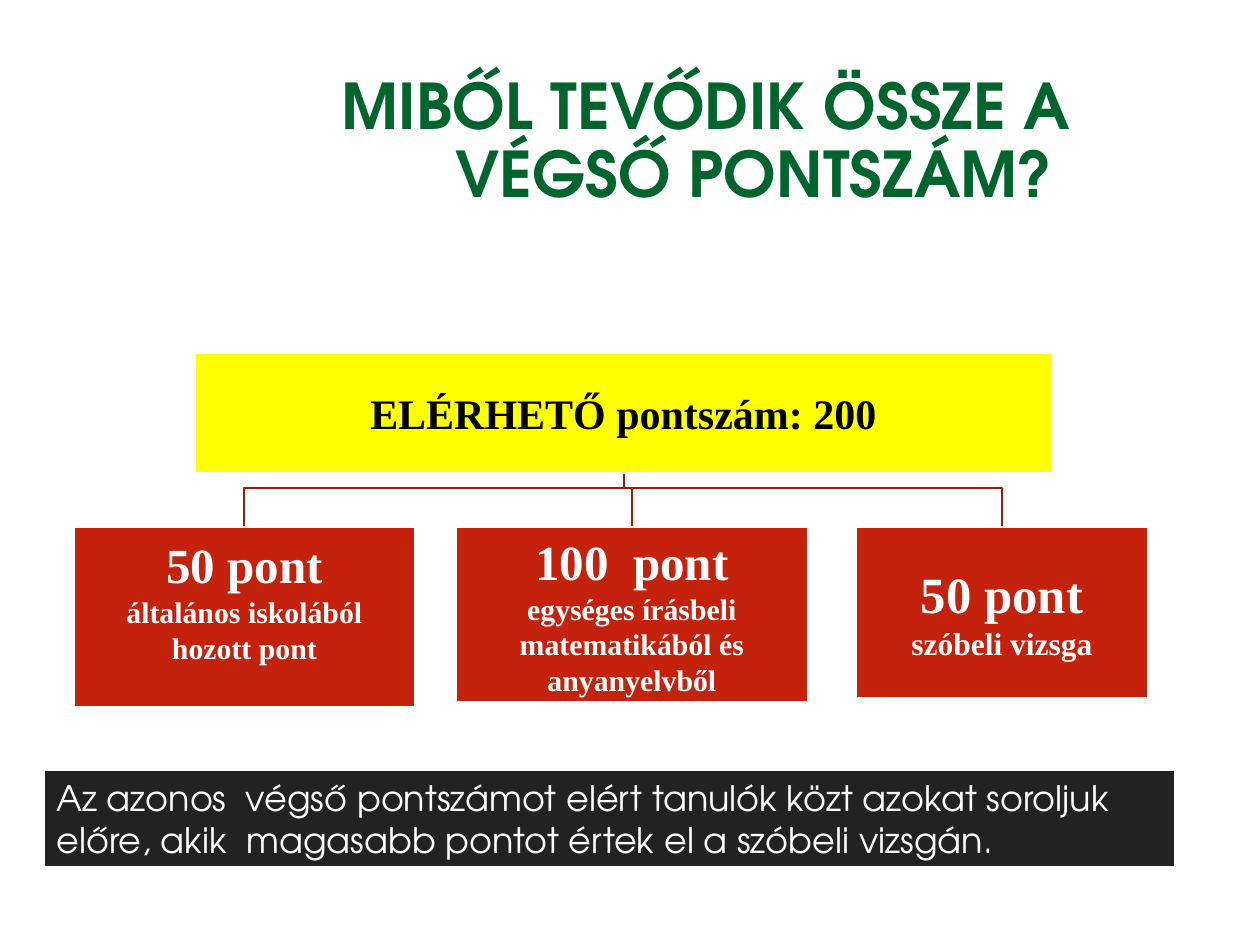
from pptx import Presentation, util as u
from pptx.dml.color import RGBColor
from pptx.enum import shapes, text

PX = 914400 / 126
SANS, SERIF = "TeX Gyre Adventor", "Times New Roman"
GREEN, RED, DARK_RED = "00642D", "C4220D", "9D1B0A"
YELLOW, CHARCOAL, BLACK, WHITE = "FFFF00", "222222", "000000", "FFFFFF"


def px(length):
    """Turn pixels into EMU."""
    return u.Emu(round(length * PX))


def color(hex_string):
    """Turn a hex string into a colour."""
    return RGBColor.from_string(hex_string)


def apply(target, values):
    """Set each attribute from a dict of format values."""
    for name, value in values.items():
        setattr(target, name, value)


def write(frame, lines, ink, font, align, **layout):
    """Write (wording, size) lines into a text frame, one paragraph each."""
    apply(frame, {"word_wrap": True, "vertical_anchor": text.MSO_ANCHOR.MIDDLE, **layout})
    for index, (wording, size) in enumerate(lines):
        paragraph = frame.add_paragraph() if index else frame.paragraphs[0]
        paragraph.alignment = align
        run = paragraph.add_run()
        run.text = wording
        apply(run.font, {"size": u.Pt(size), **font})
        run.font.color.rgb = color(ink)


def panel(slide, box, fill, border=1):
    """Add a filled rectangle with a white border."""
    rect = slide.shapes.add_shape(shapes.MSO_SHAPE.RECTANGLE, *map(px, box))
    rect.shadow.inherit = False
    rect.fill.solid()
    rect.fill.fore_color.rgb = color(fill)
    rect.line.color.rgb = color(WHITE)
    rect.line.width = u.Pt(border)
    return rect


def heading(slide, box, wording):
    """Place and format the title, leaving one line free below it."""
    title = slide.shapes.title
    apply(title, dict(zip(("left", "top", "width", "height"), map(px, box))))
    write(title.text_frame, [(wording, 36)], GREEN, {"name": SANS, "bold": True},
          text.PP_ALIGN.RIGHT, auto_size=text.MSO_AUTO_SIZE.NONE, margin_bottom=px(73))
    title.text_frame.paragraphs[0].line_spacing = 0.9


def node(slide, box, fill, ink, lines, space_below=3):
    """Add one box of the chart with its centred lines."""
    margins = {f"margin_{side}": px(3) for side in ("left", "top", "right")}
    write(panel(slide, box, fill).text_frame, lines, ink, {"name": SERIF, "bold": True},
          text.PP_ALIGN.CENTER, margin_bottom=px(space_below), **margins)


def branch(slide, start, end, bend):
    """Draw a right-angled line that turns a bend below its start."""
    (x1, y1), (x2, y2) = start, end
    builder = slide.shapes.build_freeform(x1, y1, scale=PX)
    builder.add_line_segments([(x1, y1 + bend), (x2, y1 + bend), end], close=False)
    line = builder.convert_to_shape()
    line.shadow.inherit = False
    line.fill.background()
    line.line.color.rgb = color(DARK_RED)
    line.line.width = u.Pt(1)


def score_chart(slide, box):
    """Build the total and the parts it is made of."""
    left, top, width, _ = box
    total = (left + 121, top, 857, 120)
    child_top = top + 174
    parts = [
        (0, 341, 180, [("50 pont", 28), ("általános iskolából", 17), ("hozott pont", 17)], 37),
        (382, 352, 175, [("100  pont", 28), ("egységes írásbeli", 17),
                         ("matematikából és anyanyelvből", 17)], 3),
        (782, 292, 171, [("50 pont", 29), ("szóbeli vizsga", 18)], 3),
    ]
    start = (total[0] + total[2] / 2, total[1] + total[3])
    for offset, part_width, *_ in parts:
        branch(slide, start, (left + offset + part_width / 2, child_top), 15)
    node(slide, total, YELLOW, BLACK, [("ELÉRHETŐ pontszám: 200", 24)])
    for offset, part_width, height, lines, space_below in parts:
        node(slide, (left + offset, child_top, part_width, height), RED, WHITE, lines, space_below)


def tie_rule(slide, box, wording):
    """Add the dark note on equal scores."""
    write(panel(slide, box, CHARCOAL, 1.5).text_frame, [(wording, 20)], WHITE,
          {"name": SANS}, text.PP_ALIGN.LEFT, auto_size=text.MSO_AUTO_SIZE.SHAPE_TO_FIT_TEXT)


def main():
    """Build and save the slide."""
    deck = Presentation()
    apply(deck, {"slide_width": px(1260), "slide_height": px(945)})
    slide = deck.slides.add_slide(deck.slide_layouts[5])
    heading(slide, (146, 86, 937, 180), "MIBŐL TEVŐDIK ÖSSZE A VÉGSŐ PONTSZÁM? ")
    score_chart(slide, (74, 353, 1074, 354))
    tie_rule(slide, (44, 770, 1131, 97),
             "Az azonos  végső pontszámot elért tanulók közt azokat soroljuk előre, "
             "akik  magasabb pontot értek el a szóbeli vizsgán.")
    deck.save("out.pptx")


if __name__ == "__main__":
    main()
